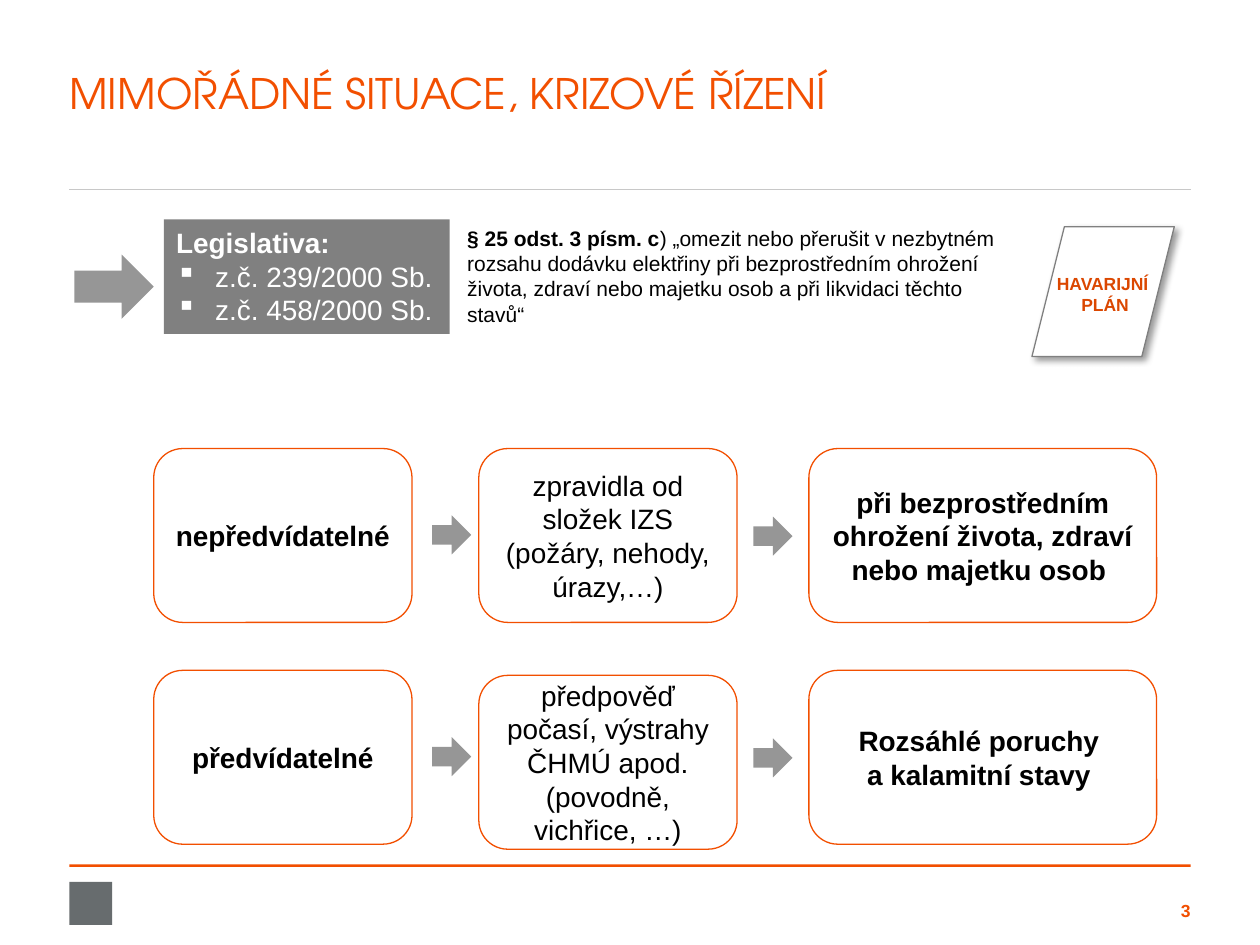
from dataclasses import dataclass

from lxml.etree import SubElement
from pptx import Presentation
from pptx.dml.color import RGBColor
from pptx.enum.shapes import MSO_CONNECTOR, MSO_SHAPE
from pptx.enum.text import MSO_ANCHOR, MSO_AUTO_SIZE, PP_ALIGN
from pptx.oxml.ns import qn
from pptx.util import Inches, Pt


@dataclass(frozen=True)
class Theme:
    orange: str = "F24F00"
    plan_orange: str = "DB4700"
    dark_gray: str = "676C6E"
    gray: str = "808080"
    arrow_gray: str = "969696"
    rule_gray: str = "C8C8C8"
    white: str = "FFFFFF"
    black: str = "000000"
    title_font: str = "TeX Gyre Adventor"
    body_font: str = "Arial"
    title_size: int = 24
    body_size: int = 16
    quote_size: int = 12
    small_size: int = 10


THEME = Theme()
LEFT, CONTENT_WIDTH = 0.55, 8.9
# Left edge and width of each column, top of each row
COLUMNS = [(1.22, 2.05), (3.8, 2.05), (6.42, 2.76)]
ROW_TOPS = [3.56, 5.32]
BOX_HEIGHT = 1.38
ARROW_SIZE = 0.31
FLOWS = [
    ["nepředvídatelné",
     "zpravidla od složek IZS (požáry, nehody, úrazy,…)",
     "při bezprostředním ohrožení života, zdraví nebo majetku osob "],
    ["předvídatelné",
     "předpověď počasí, výstrahy ČHMÚ apod. (povodně, vichřice, …)",
     "Rozsáhlé poruchy \va kalamitní stavy "],
]


def rgb(color):
    return RGBColor.from_string(color)


def style_runs(paragraph, size, color, bold=False, font=THEME.body_font):
    for run in paragraph.runs:
        run.font.name = font
        run.font.size = Pt(size)
        run.font.bold = bold
        run.font.color.rgb = rgb(color)


def set_frame(frame, anchor=MSO_ANCHOR.TOP, wrap=True, margins=True):
    frame.auto_size = MSO_AUTO_SIZE.NONE
    frame.word_wrap = wrap
    frame.vertical_anchor = anchor
    if not margins:
        frame.margin_left = frame.margin_right = 0
        frame.margin_top = frame.margin_bottom = 0


def add_block(slide, preset, box, fill, line=None):
    block = slide.shapes.add_shape(preset, *map(Inches, box))
    block.shadow.inherit = False
    block.fill.solid()
    block.fill.fore_color.rgb = rgb(fill)
    if line:
        block.line.color.rgb = rgb(line)
        block.line.width = Pt(0)
    else:
        block.line.fill.background()
    return block


def add_label(slide, box, text, size, color, align=PP_ALIGN.LEFT, **frame_options):
    frame = slide.shapes.add_textbox(*map(Inches, box)).text_frame
    set_frame(frame, **frame_options)
    frame.text = text
    frame.paragraphs[0].alignment = align
    style_runs(frame.paragraphs[0], size, color, bold=True)
    return frame


def add_rule(slide, top):
    rule = slide.shapes.add_connector(
        MSO_CONNECTOR.STRAIGHT, Inches(LEFT), Inches(top),
        Inches(LEFT + CONTENT_WIDTH), Inches(top))
    rule.line.color.rgb = rgb(THEME.rule_gray)
    rule.line.width = Pt(0.5)
    SubElement(rule._element.spPr, qn("a:effectLst"))


def add_bullet(paragraph):
    properties = paragraph._p.get_or_add_pPr()
    properties.set("marL", str(Inches(0.31)))
    properties.set("indent", str(-Inches(0.31)))
    SubElement(properties, qn("a:buChar")).set("char", "▪")


def add_drop_shadow(block):
    effects = block._element.spPr.find(qn("a:effectLst"))
    shadow = SubElement(effects, qn("a:outerShdw"), blurRad=str(Pt(4)),
                        dist=str(Pt(3)), dir=str(45 * 60000))
    color = SubElement(shadow, qn("a:srgbClr"), val=THEME.black)
    SubElement(color, qn("a:alpha"), val="40000")


def set_title(slide, text):
    title = slide.shapes.title
    title.left, title.top = Inches(LEFT), Inches(0.48)
    title.width, title.height = Inches(CONTENT_WIDTH), Inches(0.43)
    set_frame(title.text_frame, margins=False)
    title.text_frame.text = text
    heading = title.text_frame.paragraphs[0]
    heading.alignment = PP_ALIGN.LEFT
    heading.line_spacing = Pt(33)
    style_runs(heading, THEME.title_size, THEME.orange, font=THEME.title_font)


def add_footer(slide):
    add_block(slide, MSO_SHAPE.RECTANGLE, (LEFT, 6.86, CONTENT_WIDTH, 0.02), THEME.orange)
    add_block(slide, MSO_SHAPE.RECTANGLE, (LEFT, 7, 0.34, 0.34), THEME.dark_gray)
    add_label(slide, (9.11, 7.14, 0.34, 0.17), "3", THEME.small_size, THEME.orange,
              align=PP_ALIGN.RIGHT, anchor=MSO_ANCHOR.MIDDLE, margins=False)


def add_legislation(slide):
    add_block(slide, MSO_SHAPE.RIGHT_ARROW, (0.59, 2.02, 0.63, 0.51), THEME.arrow_gray)
    laws = add_block(slide, MSO_SHAPE.RECTANGLE, (1.3, 1.74, 2.27, 0.91), THEME.gray)
    set_frame(laws.text_frame, wrap=False)
    laws.text_frame.text = "Legislativa:\nz.č. 239/2000 Sb.\nz.č. 458/2000 Sb."
    for index, paragraph in enumerate(laws.text_frame.paragraphs):
        paragraph.alignment = PP_ALIGN.LEFT
        style_runs(paragraph, THEME.body_size, THEME.white, bold=index == 0)
        if index:
            add_bullet(paragraph)

    quote = add_label(slide, (3.61, 1.74, 4.46, 0.91), "§ 25 odst. 3 písm. c",
                      THEME.quote_size, THEME.black).paragraphs[0]
    wording = quote.add_run()
    wording.text = (") „omezit nebo přerušit v nezbytném rozsahu dodávku elektřiny "
                    "při bezprostředním ohrožení života, zdraví nebo majetku osob "
                    "a při likvidaci těchto stavů“")
    style_runs(quote, THEME.quote_size, THEME.black)
    quote.runs[0].font.bold = True


def add_emergency_plan(slide):
    sheet = add_block(slide, MSO_SHAPE.PARALLELOGRAM, (8.19, 1.8, 1.13, 1.03),
                      THEME.white, THEME.gray)
    add_drop_shadow(sheet)
    add_label(slide, (8.27, 2.12, 1, 0.44), "HAVARIJNÍ \vPLÁN", THEME.small_size,
              THEME.plan_orange, align=PP_ALIGN.CENTER, wrap=False)


def add_step(slide, box, text, bold):
    step = add_block(slide, MSO_SHAPE.ROUNDED_RECTANGLE, box, THEME.white, THEME.orange)
    set_frame(step.text_frame, anchor=MSO_ANCHOR.MIDDLE)
    step.text_frame.text = text
    step.text_frame.paragraphs[0].alignment = PP_ALIGN.CENTER
    style_runs(step.text_frame.paragraphs[0], THEME.body_size, THEME.black, bold)


def add_flows(slide):
    for row, (top, texts) in enumerate(zip(ROW_TOPS, FLOWS)):
        for column, ((left, width), text) in enumerate(zip(COLUMNS, texts)):
            # The forecast box sits slightly below its row
            drop = 0.04 if (row, column) == (1, 1) else 0
            add_step(slide, (left, top + drop, width, BOX_HEIGHT), text, bold=column != 1)
        for arrow_left, offset in [(3.43, 0.53), (5.98, 0.54)]:
            add_block(slide, MSO_SHAPE.RIGHT_ARROW,
                      (arrow_left, top + offset, ARROW_SIZE, ARROW_SIZE), THEME.arrow_gray)


def main():
    deck = Presentation()
    deck.slide_width, deck.slide_height = Inches(10), Inches(7.5)
    slide = deck.slides.add_slide(deck.slide_layouts[5])
    set_title(slide, "MIMOŘÁDNÉ SITUACE, KRIZOVÉ ŘÍZENÍ")
    add_rule(slide, 1.5)
    add_footer(slide)
    add_legislation(slide)
    add_emergency_plan(slide)
    add_flows(slide)
    deck.save("out.pptx")


if __name__ == "__main__":
    main()
